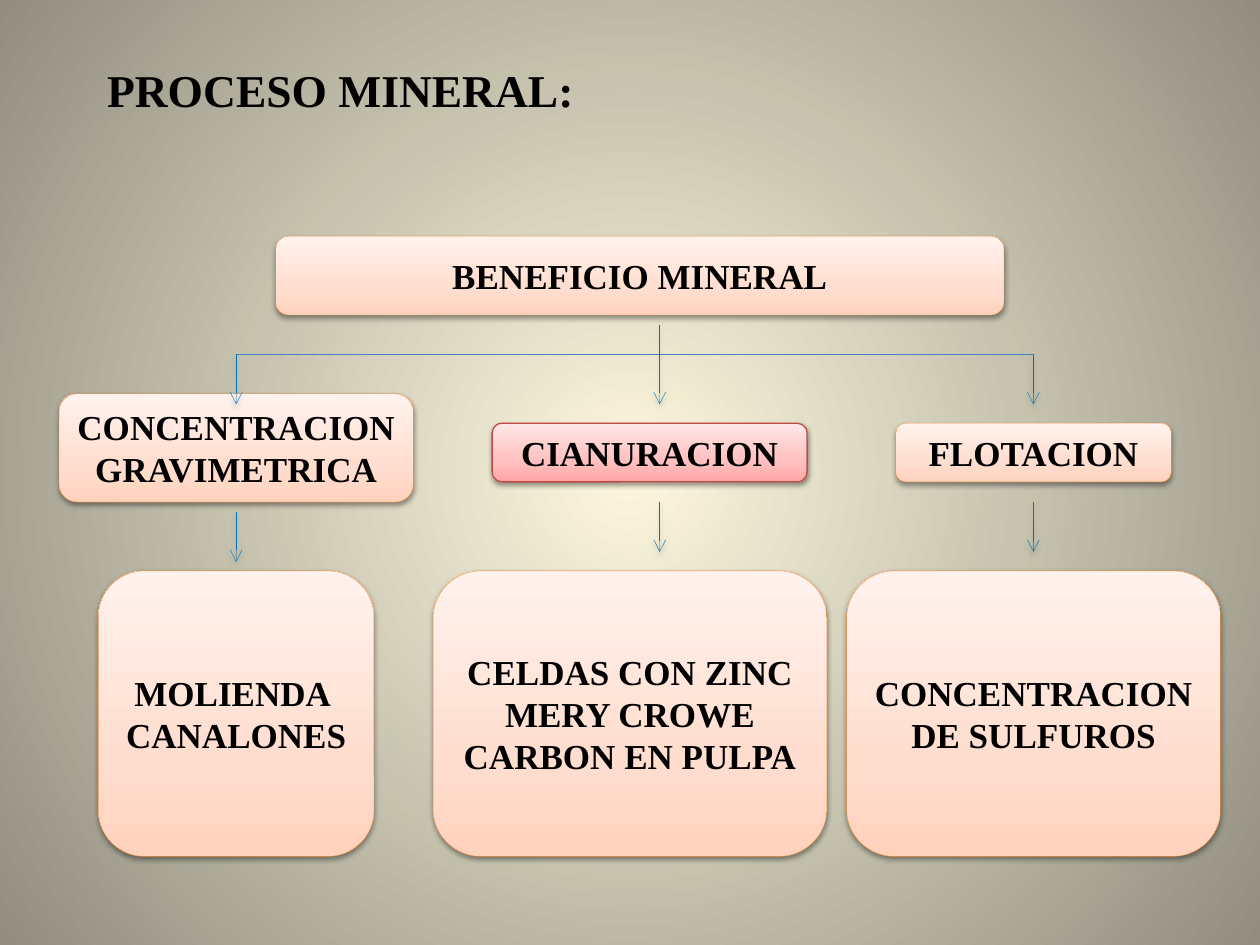
import pptx
import pptx.dml.color
import pptx.enum.shapes
import pptx.enum.text
import pptx.oxml
import pptx.oxml.ns
import pptx.util

Pt = pptx.util.Pt
RGB = pptx.dml.color.RGBColor
ALIGN = pptx.enum.text.PP_ALIGN
MIDDLE = pptx.enum.text.MSO_ANCHOR.MIDDLE
NS = pptx.oxml.ns.nsdecls("a")

FONT = "Times New Roman"
BLACK = RGB(0x00, 0x00, 0x00)
CREAM = RGB(0xFC, 0xF7, 0xDD)
OLIVE = RGB(0x91, 0x8E, 0x81)
ORANGE = RGB(0xF6, 0x92, 0x40)
RED = RGB(0xBF, 0x4C, 0x48)
BLUE = RGB(0x00, 0x70, 0xC0)
STEEL = RGB(0x4B, 0x7E, 0xBC)
PEACH = [(0, RGB(0xFF, 0xD2, 0xBD)), (35, RGB(0xFF, 0xDE, 0xD0)),
         (100, RGB(0xFF, 0xF2, 0xED))]
PINK = [(0, RGB(0xFF, 0xA6, 0xA5)), (35, RGB(0xFF, 0xC0, 0xBF)),
        (100, RGB(0xFF, 0xE7, 0xE7))]
UPWARD = '<a:lin ang="16200000" scaled="0"/>'
RADIAL = ('<a:path path="circle"><a:fillToRect l="50000" t="50000" '
          'r="50000" b="50000"/></a:path>')

# Centre lines of the three branches
LEFT, MID, RIGHT = 135, 377, 590.5
BAR_Y = 202.5


def set_grad(fill, parent, stops, shade):
    """Give the fill under parent a gradient of (percent, colour) stops."""
    fill.solid()
    marks = "".join(
        f'<a:gs pos="{pos * 1000}"><a:srgbClr val="{color}"/></a:gs>'
        for pos, color in stops)
    grad = pptx.oxml.parse_xml(
        f'<a:gradFill {NS} rotWithShape="1"><a:gsLst>{marks}</a:gsLst>'
        f'{shade}</a:gradFill>')
    solid = parent.find(pptx.oxml.ns.qn("a:solidFill"))
    parent.replace(solid, grad)


def set_effect(shape, shadow=True):
    """Put a soft drop shadow, or an empty effect list, on the shape."""
    drop = (f'<a:outerShdw blurRad="{Pt(3.1)}" dist="{Pt(1.6)}" dir="5400000" '
            'rotWithShape="0"><a:srgbClr val="000000"><a:alpha val="38000"/>'
            '</a:srgbClr></a:outerShdw>') if shadow else ""
    shape._element.spPr.append(
        pptx.oxml.parse_xml(f'<a:effectLst {NS}>{drop}</a:effectLst>'))


def write(frame, lines, size, align):
    frame.word_wrap = True
    frame.vertical_anchor = MIDDLE
    for i, line in enumerate(lines):
        para = frame.paragraphs[0] if i == 0 else frame.add_paragraph()
        para.alignment = align
        run = para.add_run()
        run.text = line
        run.font.name = FONT
        run.font.size = Pt(size)
        run.font.bold = True
        run.font.color.rgb = BLACK


def add_title(slide, text):
    title = slide.shapes.title
    title.left, title.top = Pt(54), Pt(28)
    title.width, title.height = Pt(612), Pt(46)
    write(title.text_frame, [text], 26, ALIGN.JUSTIFY)


def add_box(slide, place, lines, stops=PEACH, edge=ORANGE, weight=0.25):
    kind = pptx.enum.shapes.MSO_SHAPE.ROUNDED_RECTANGLE
    box = slide.shapes.add_shape(kind, *map(Pt, place))
    set_grad(box.fill, box._element.spPr, stops, UPWARD)
    box.line.color.rgb = edge
    box.line.width = Pt(weight)
    set_effect(box)
    write(box.text_frame, lines, 20, ALIGN.CENTER)


def add_line(slide, start, end, color, weight):
    kind = pptx.enum.shapes.MSO_CONNECTOR.STRAIGHT
    line = slide.shapes.add_connector(kind, *map(Pt, start + end))
    line.line.color.rgb = color
    line.line.width = Pt(weight)
    return line


def add_arrow(slide, x, top, bottom):
    arrow = add_line(slide, (x, top), (x, bottom), BLUE, 0.25)
    arrow.line._get_or_add_ln().append(
        pptx.oxml.parse_xml(f'<a:tailEnd {NS} type="arrow"/>'))
    set_effect(arrow)


def main():
    prs = pptx.Presentation()
    prs.slide_width, prs.slide_height = Pt(720), Pt(540)
    slide = prs.slides.add_slide(prs.slide_layouts[0])
    sub = slide.placeholders[1]._element
    sub.getparent().remove(sub)

    back = slide.background.fill
    back.solid()
    set_grad(back, slide._element.cSld.bg.bgPr,
             [(0, CREAM), (100, OLIVE)], RADIAL)

    add_title(slide, "PROCESO MINERAL:")
    add_box(slide, (157.5, 135, 416.25, 45), ["BENEFICIO MINERAL"])

    add_box(slide, (33.75, 225, 202.5, 61.88), ["CONCENTRACION GRAVIMETRICA"])
    add_box(slide, (281.25, 241.88, 180, 33.5), ["CIANURACION"],
            PINK, RED, 0.75)
    add_box(slide, (511.88, 241.88, 157.5, 33.5), ["FLOTACION"])

    products = [
        (56.25, 157.5, ["MOLIENDA ", "CANALONES"]),
        (247.5, 225, ["CELDAS CON ZINC", "MERY CROWE", "CARBON EN PULPA"]),
        (483.75, 213.75, ["CONCENTRACION DE SULFUROS"]),
    ]
    for left, width, lines in products:
        add_box(slide, (left, 326.25, width, 163.13), lines)

    bar = add_line(slide, (LEFT, BAR_Y), (RIGHT, BAR_Y), STEEL, 0.75)
    set_effect(bar, shadow=False)
    for x, top in [(LEFT, BAR_Y), (MID, 185.63), (RIGHT, BAR_Y)]:
        add_arrow(slide, x, top, 231)
    for x, top in [(LEFT, 292.5), (MID, 286.88), (RIGHT, 286.88)]:
        add_arrow(slide, x, top, top + 28.5)

    prs.save("out.pptx")


if __name__ == "__main__":
    main()
